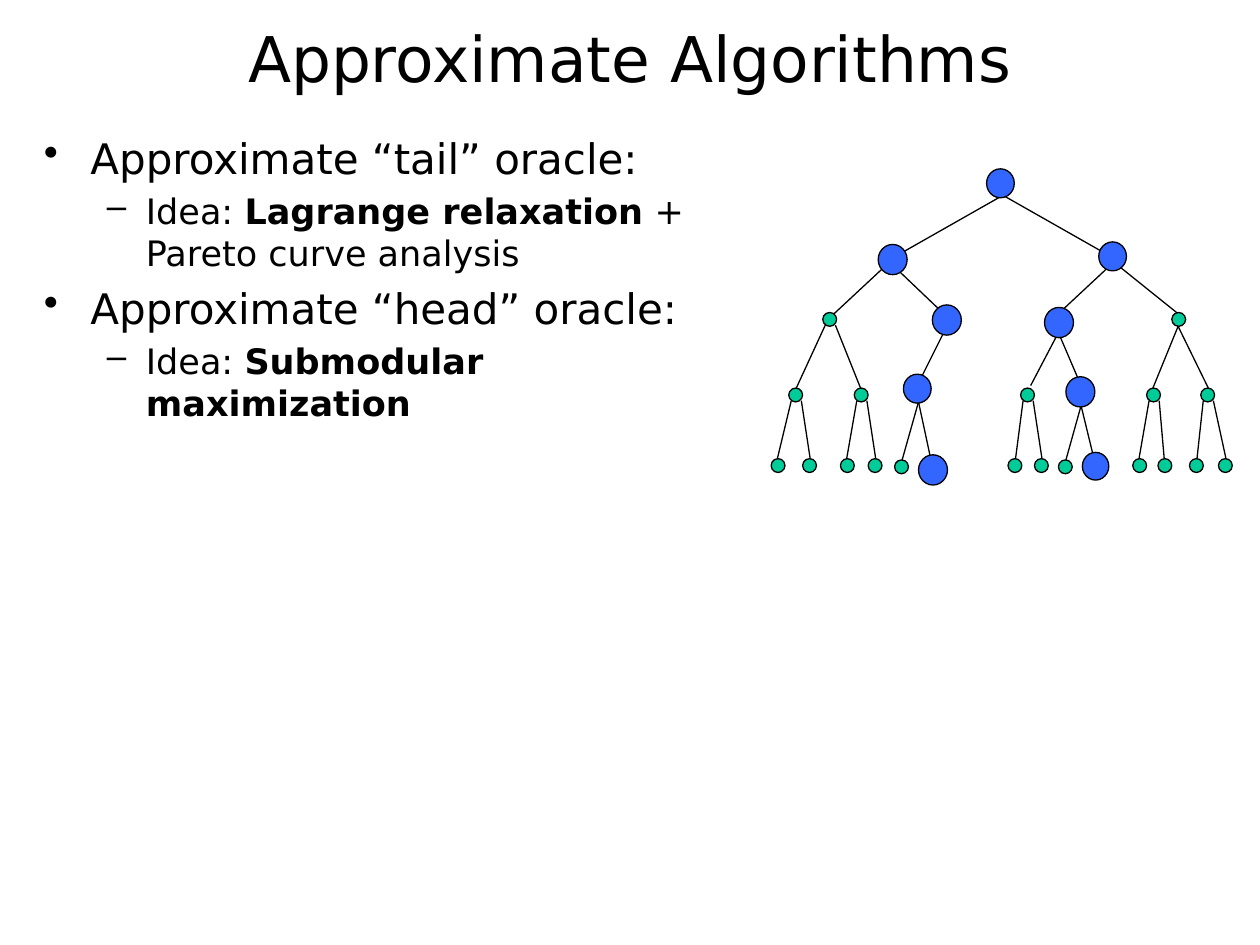
import pptx
import pptx.dml.color
import pptx.enum.shapes
import pptx.enum.text
import pptx.oxml.ns
import pptx.util
from lxml import etree
from pptx.util import Inches

FONT = "DejaVu Sans"
BLACK, SELECTED, UNSELECTED = "000000", "3366FF", "00CC99"
SMALL_NODE = 0.11

BULLETS = [
    (0, [("Approximate “tail” oracle:", False)]),
    (1, [("Idea: ", False), ("Lagrange relaxation", True), (" + Pareto curve analysis", False)]),
    (0, [("Approximate “head” oracle:", False)]),
    (1, [("Idea: ", False), ("Submodular maximization", True)]),
]
# Per level: character, size, left margin, hanging indent
LEVELS = [("•", 24, 0.37, 0.37), ("–", 20, 0.81, 0.31)]

BRANCHES = [
    ((7.96, 1.55), [(7.15, 2.01), (8.77, 2.01)]),
    ((7.06, 2.08), [(6.62, 2.49), (7.49, 2.49)]),
    ((8.84, 2.08), [(8.4, 2.49), (9.35, 2.49)]),
    ((6.55, 2.58), [(6.32, 3.08)]),
    ((6.63, 2.58), [(6.83, 3.08)]),
    ((7.49, 2.64), [(7.29, 3.04)]),
    ((8.4, 2.64), [(8.18, 3.06), (8.58, 3.06)]),
    ((9.35, 2.59), [(9.15, 3.08), (9.59, 3.08)]),
    ((7.29, 3.19), [(7.16, 3.65), (7.38, 3.61)]),
    ((8.58, 3.22), [(8.46, 3.65), (8.68, 3.63)]),
]
# Left edge of each small parent, with the x where its two leaf edges end
LEAF_PARENTS = [
    (6.26, (6.17, 6.43)), (6.78, (6.72, 6.95)), (8.1, (8.06, 8.27)),
    (9.1, (9.04, 9.24)), (9.53, (9.5, 9.73)),
]
SMALL_ROWS = [
    (2.48, [6.53, 9.3]),
    (3.08, [left for left, _ in LEAF_PARENTS]),
    (3.64, [6.12, 6.37, 6.67, 6.89, 8, 8.21, 8.99, 9.19, 9.44, 9.67]),
    (3.65, [7.1, 8.4]),
]
SELECTED_NODES = [
    (7.83, 1.34, 0.22, 0.23), (6.97, 1.94, 0.23, 0.24), (8.72, 1.92, 0.22, 0.23),
    (7.4, 2.42, 0.23, 0.24), (8.29, 2.44, 0.23, 0.24), (7.17, 2.97, 0.22, 0.23),
    (8.46, 2.99, 0.23, 0.24), (7.29, 3.61, 0.23, 0.24), (8.59, 3.59, 0.21, 0.22),
]


def color(hex_value):
    """Turn a hex string into a colour."""
    return pptx.dml.color.RGBColor.from_string(hex_value)


def add_text(paragraph, text, size=20, bold=False, fill=BLACK):
    """Append a formatted run to a paragraph."""
    run = paragraph.add_run()
    run.text = text
    run.font.name = FONT
    run.font.size = pptx.util.Pt(size)
    run.font.bold = bold
    run.font.color.rgb = color(fill)


def add_bullet(paragraph, level, pieces):
    """Fill a paragraph as a bulleted item of the given level."""
    character, size, margin, hanging = LEVELS[level]
    paragraph.level = level
    paragraph.space_before = pptx.util.Pt(size * 0.2)
    properties = paragraph._p.get_or_add_pPr()
    properties.set("marL", str(Inches(margin)))
    properties.set("indent", str(-Inches(hanging)))
    bullet = etree.SubElement(properties, pptx.oxml.ns.qn("a:buChar"))
    bullet.set("char", character)
    for text, bold in pieces:
        add_text(paragraph, text, size=size, bold=bold)


def add_title(slide, text):
    """Place and format the slide title."""
    title = slide.shapes.title
    title.left, title.top = Inches(0.75), Inches(-0.17)
    title.width, title.height = Inches(8.5), Inches(1.25)
    frame = title.text_frame
    frame.vertical_anchor = pptx.enum.text.MSO_ANCHOR.MIDDLE
    frame.paragraphs[0].alignment = pptx.enum.text.PP_ALIGN.CENTER
    add_text(frame.paragraphs[0], text, size=36)


def add_bullets(slide):
    """Add the bulleted list of oracles."""
    frame = slide.shapes.add_textbox(Inches(0.25), Inches(1), Inches(5.87), Inches(4.92)).text_frame
    frame.word_wrap = True
    for index, (level, pieces) in enumerate(BULLETS):
        paragraph = frame.add_paragraph() if index else frame.paragraphs[0]
        add_bullet(paragraph, level, pieces)


def add_edge(tree, start, end):
    """Draw a thin line between two points of the tree."""
    points = [Inches(value) for value in (*start, *end)]
    edge = tree.shapes.add_connector(pptx.enum.shapes.MSO_CONNECTOR.STRAIGHT, *points)
    edge.line.color.rgb = color(BLACK)
    edge.line.width = pptx.util.Pt(0.75)
    etree.SubElement(edge._element.spPr, pptx.oxml.ns.qn("a:effectLst"))


def add_node(tree, left, top, width, height, fill):
    """Draw a round tree node."""
    box = [Inches(value) for value in (left, top, width, height)]
    node = tree.shapes.add_shape(pptx.enum.shapes.MSO_SHAPE.OVAL, *box)
    node.shadow.inherit = False
    node.fill.solid()
    node.fill.fore_color.rgb = color(fill)
    node.line.color.rgb = color(BLACK)
    node.line.width = pptx.util.Pt(0.75)


def add_tree(slide):
    """Draw the binary tree with its selected subtree."""
    tree = slide.shapes.add_group_shape()
    for start, ends in BRANCHES:
        for end in ends:
            add_edge(tree, start, end)
    for left, leaves in LEAF_PARENTS:
        for offset, leaf in zip((0.02, 0.1), leaves):
            add_edge(tree, (left + offset, 3.18), (leaf, 3.64))
    for top, lefts in SMALL_ROWS:
        for left in lefts:
            add_node(tree, left, top, SMALL_NODE, SMALL_NODE, UNSELECTED)
    for box in SELECTED_NODES:
        add_node(tree, *box, SELECTED)


def main():
    """Build and save the slide."""
    presentation = pptx.Presentation()
    presentation.slide_width, presentation.slide_height = Inches(10), Inches(7.5)
    slide = presentation.slides.add_slide(presentation.slide_layouts[5])
    add_title(slide, "Approximate Algorithms")
    add_bullets(slide)
    add_tree(slide)
    presentation.save("out.pptx")


if __name__ == "__main__":
    main()
